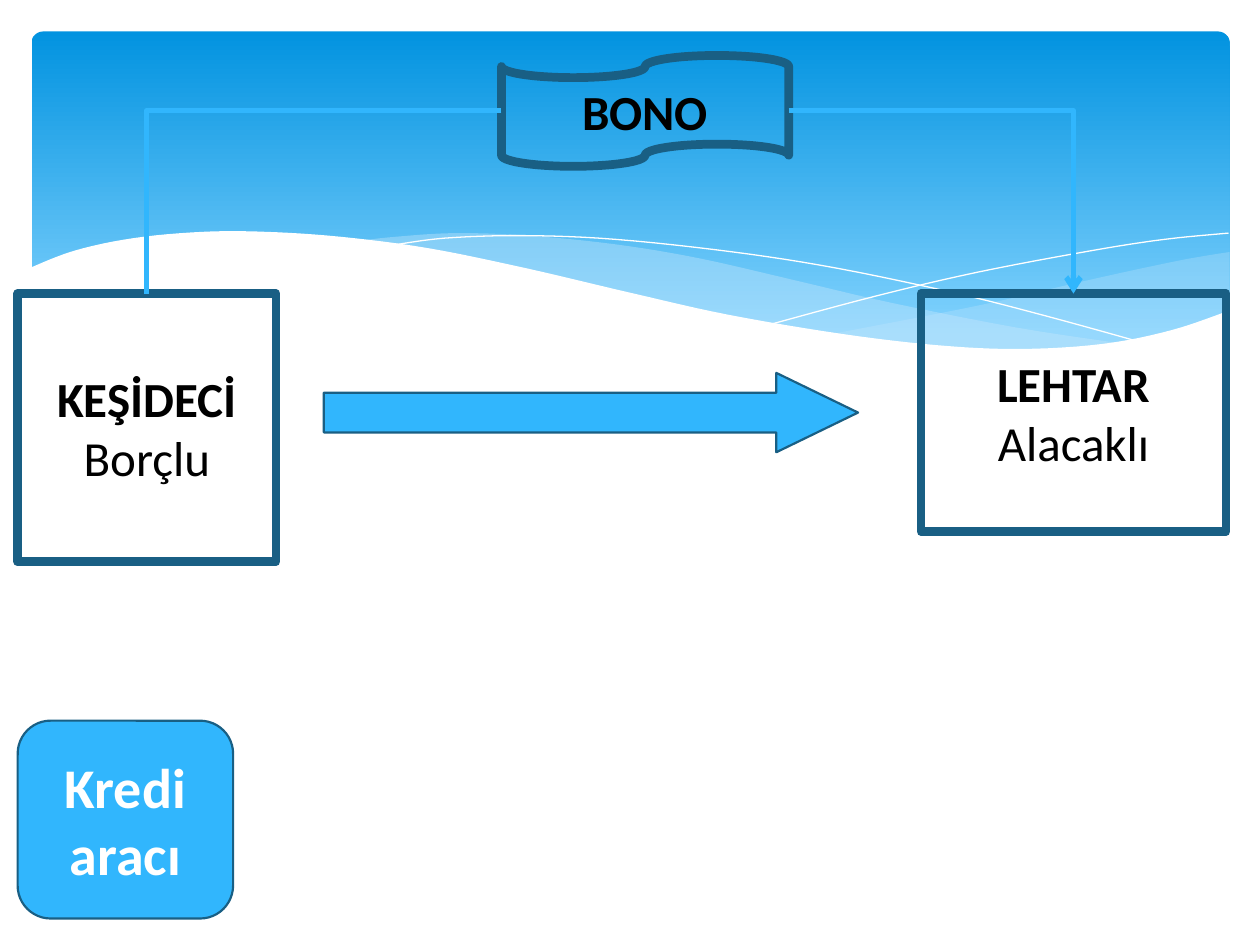
"""Build a slide showing the parties to a bono, over a wave background."""
import lxml.etree
import pptx
import pptx.dml.color
import pptx.enum.shapes
import pptx.enum.text
import pptx.oxml.ns
import pptx.util

Inches = pptx.util.Inches
SHAPES = pptx.enum.shapes.MSO_SHAPE
COLORS = {"sky": "0293E0", "pale": "83D3FE", "mist": "C6E7FC", "white": "FFFFFF",
          "navy": "195F84", "blue": "31B6FD", "black": "000000"}
FONT = "Calibri"

WAVES = [
    dict(curves=[[(9.76, 2), (9.35, 2.07), (8.61, 2.23), (7.79, 2.42), (6.61, 2.65)],
                 [(6.61, 2.65), (7.19, 2.72), (7.69, 2.77), (8.14, 2.78), (8.63, 2.75),
                  (9.13, 2.67), (9.49, 2.57), (9.76, 2.47)]],
         fill="mist", opacity=29),
    dict(curves=[[(8.93, 2.73), (8.07, 2.6), (7.06, 2.4), (6.29, 2.22), (5.55, 2.05),
                  (4.89, 1.94), (4.2, 1.87), (3.61, 1.85), (3.13, 1.88), (2.86, 1.91)],
                 [(2.86, 1.91), (3.62, 2.03), (4.49, 2.22), (5.3, 2.4), (6.18, 2.58),
                  (6.95, 2.7), (7.61, 2.77), (8.18, 2.78), (8.93, 2.73)]],
         fill="mist", opacity=40),
    dict(curves=[[(3.09, 1.95), (3.53, 1.89), (4.16, 1.87), (4.89, 1.9), (5.82, 2),
                  (6.65, 2.13), (7.6, 2.33), (8.31, 2.51), (9.07, 2.72)]], line="white"),
    dict(curves=[[(6.13, 2.57), (6.95, 2.35), (7.76, 2.16), (8.66, 1.99), (9.24, 1.9),
                  (9.75, 1.85)]], line="white"),
    dict(curves=[[(9.77, 2.46), (9.3, 2.62), (8.75, 2.73), (8.09, 2.77), (7.44, 2.74),
                  (6.68, 2.65), (5.79, 2.5), (5.03, 2.33), (4.18, 2.13), (3.4, 1.97),
                  (2.71, 1.88), (2.11, 1.84), (1.61, 1.84), (1.06, 1.89), (0.59, 1.99),
                  (0.23, 2.13)],
                 [(0.23, 3.29), (9.77, 3.29)]], fill="white"),
]

BOXES = {
    "bono": dict(kind=SHAPES.WAVE and SHAPES.FLOWCHART_PUNCHED_TAPE,
                 at=(3.98, 0.44, 2.28, 0.88), runs=[("BONO", True)]),
    "lehtar": dict(kind=SHAPES.RECTANGLE, at=(7.31, 2.33, 2.42, 1.89),
                   runs=[("LEHTAR ", True), ("Alacaklı", False)]),
    "kesideci": dict(kind=SHAPES.RECTANGLE, at=(0.14, 2.33, 2.05, 2.13),
                     runs=[("KEŞİDECİ", True), (" Borçlu", False)]),
    "kredi": dict(kind=SHAPES.ROUNDED_RECTANGLE, at=(0.14, 5.72, 1.71, 1.57),
                  runs=[("Kredi aracı", True)], fill="blue", width=1.25,
                  size=32, color="white"),
    "arrow": dict(kind=SHAPES.RIGHT_ARROW, at=(2.57, 2.96, 4.24, 0.63),
                  fill="blue", width=1.25, adjustments=(0.5, 1.03)),
}
LINKS = [dict(side=3, target="lehtar", arrow=True),
         dict(side=1, target="kesideci", arrow=False)]


def rgb(name):
    return pptx.dml.color.RGBColor.from_string(COLORS[name])


def sub(parent, tag, **attributes):
    return lxml.etree.SubElement(parent, pptx.oxml.ns.qn(tag), attributes)


def paint(shape, fill=None, line=None, width=0, opacity=100):
    shape.shadow.inherit = False
    if fill:
        shape.fill.solid()
        shape.fill.fore_color.rgb = rgb(fill)
        if opacity < 100:
            color = shape.fill._xPr.find(".//" + pptx.oxml.ns.qn("a:srgbClr"))
            sub(color, "a:alpha", val=str(opacity * 1000))
    else:
        shape.fill.background()
    if line:
        shape.line.color.rgb = rgb(line)
        shape.line.width = pptx.util.Pt(width)
    else:
        shape.line.fill.background()


def write(shape, runs, size=28, color="black"):
    frame = shape.text_frame
    frame.word_wrap = True
    frame.vertical_anchor = pptx.enum.text.MSO_ANCHOR.MIDDLE
    paragraph = frame.paragraphs[0]
    paragraph.alignment = pptx.enum.text.PP_ALIGN.CENTER
    for text, bold in runs:
        run = paragraph.add_run()
        run.text = text
        run.font.name = FONT
        run.font.size = pptx.util.Pt(size)
        run.font.bold = bold
        run.font.color.rgb = rgb(color)


def smooth_curve(points, steps=6):
    """Return a Catmull-Rom curve through the points."""
    if len(points) < 3:
        return points
    padded = [points[0], *points, points[-1]]
    curve = [points[0]]
    for a, b, c, d in zip(padded, padded[1:], padded[2:], padded[3:]):
        for step in range(1, steps + 1):
            t = step / steps
            curve.append(tuple(
                q + t / 2 * (r - p + t * (2 * p - 5 * q + 4 * r - s
                                          + t * (3 * q - p - 3 * r + s)))
                for p, q, r, s in zip(a, b, c, d)))
    return curve


def add_wave(slide, curves, **style):
    points = [(Inches(x), Inches(y)) for curve in curves for x, y in smooth_curve(curve)]
    builder = slide.shapes.build_freeform(*points[0])
    builder.add_line_segments(points[1:], close="fill" in style)
    paint(builder.convert_to_shape(), **style)


def add_sky(slide):
    sky = slide.shapes.add_shape(SHAPES.ROUNDED_RECTANGLE,
                                 *map(Inches, (0.25, 0.25, 9.51, 2.7)))
    sky.adjustments[0] = 0.034
    paint(sky)
    sky.fill.gradient()
    sky.fill.gradient_angle = 270
    for stop, position, color in zip(sky.fill.gradient_stops, (0, 0.9), ("sky", "pale")):
        stop.position = position
        stop.color.rgb = rgb(color)


def add_box(slide, kind, at, runs=(), fill=None, width=5, adjustments=(), **text_format):
    shape = slide.shapes.add_shape(kind, *map(Inches, at))
    for index, value in enumerate(adjustments):
        shape.adjustments[index] = value
    paint(shape, fill, "navy", width)
    if runs:
        write(shape, runs, **text_format)
    return shape


def add_link(slide, source, side, target, arrow):
    connector = slide.shapes.add_connector(pptx.enum.shapes.MSO_CONNECTOR.ELBOW, 0, 0, 0, 0)
    connector.begin_connect(source, side)
    connector.end_connect(target, 0)
    connector.line.color.rgb = rgb("blue")
    connector.line.width = pptx.util.Pt(3)
    properties = connector._element.spPr
    properties.find(pptx.oxml.ns.qn("a:prstGeom")).set("prst", "bentConnector2")
    if arrow:
        sub(connector.line._get_or_add_ln(), "a:tailEnd", type="arrow")
    sub(properties, "a:effectLst")


def main():
    presentation = pptx.Presentation()
    presentation.slide_width, presentation.slide_height = Inches(10), Inches(7.5)
    slide = presentation.slides.add_slide(presentation.slide_layouts[6])
    add_sky(slide)
    for wave in WAVES:
        add_wave(slide, **wave)
    boxes = {name: add_box(slide, **box) for name, box in BOXES.items()}
    for link in LINKS:
        add_link(slide, boxes["bono"], link["side"], boxes[link["target"]], link["arrow"])
    presentation.save("out.pptx")


if __name__ == "__main__":
    main()
